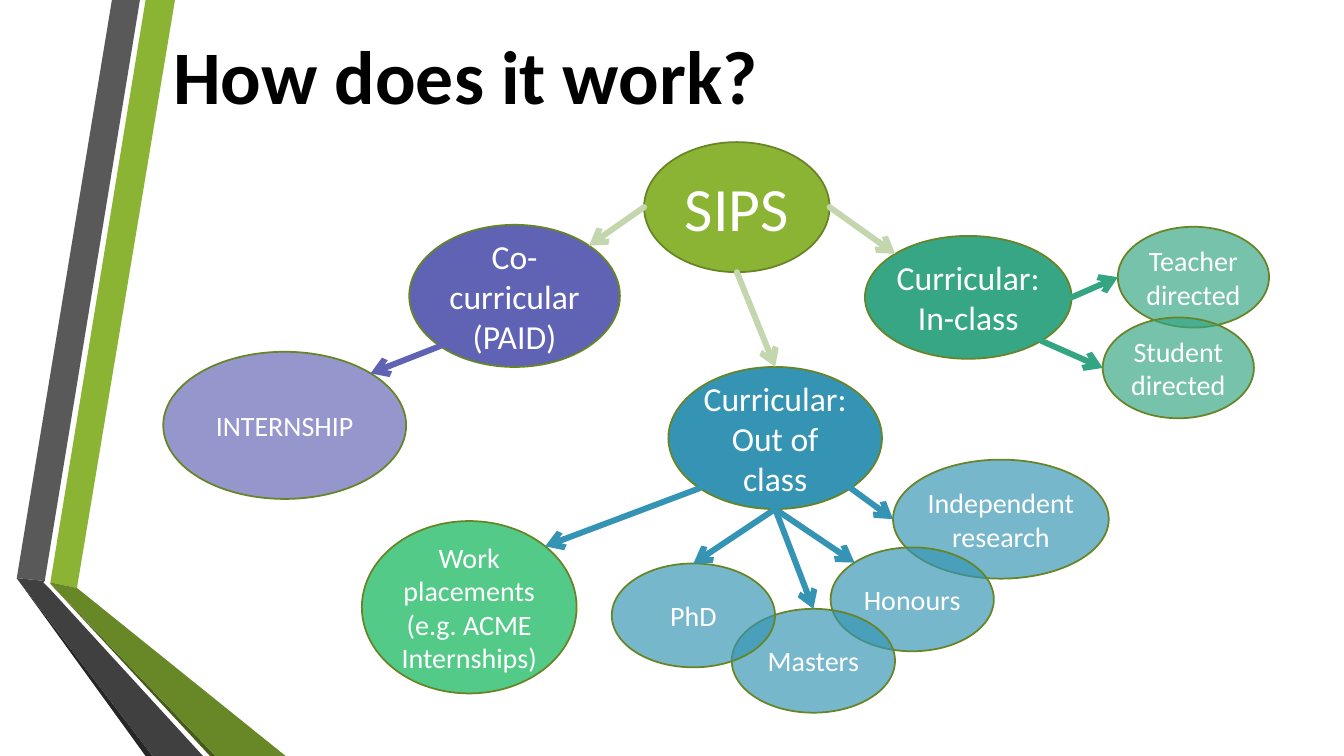
from math import cos, radians, sin

from lxml import etree
from pptx import Presentation
from pptx.dml.color import RGBColor
from pptx.enum.shapes import MSO_CONNECTOR, MSO_SHAPE
from pptx.enum.text import MSO_ANCHOR, MSO_AUTO_SIZE, PP_ALIGN
from pptx.oxml.ns import qn
from pptx.util import Pt

STRAIGHT = MSO_CONNECTOR.STRAIGHT
ELLIPSE = MSO_SHAPE.OVAL
TOP, MIDDLE = MSO_ANCHOR.TOP, MSO_ANCHOR.MIDDLE
LEFT, CENTER = PP_ALIGN.LEFT, PP_ALIGN.CENTER
NO_AUTOFIT = MSO_AUTO_SIZE.NONE
TITLE_ONLY = 5

COLORS = {
    "black": "000000", "white": "FFFFFF", "outline": "678526",
    "lime": "8BB434", "olive": "688727", "moss": "465A1A",
    "gray": "595959", "charcoal": "404040", "coal": "262626",
    "sage": "C4D6AE", "teal": "33A583", "blue": "3594B4",
    "violet": "6063B4", "green": "00B050",
}

RIBBONS = [
    ("lime", [(36, 416.2), (55.4, 419.8), (124.6, 0), (104.4, 0)]),
    ("gray", [(100.1, 0), (79.9, 0), (11.5, 412.6), (31.7, 415.4)]),
    ("coal", [(11.5, 412.6), (104.4, 540), (108.7, 540)]),
    ("moss", [(36, 416.9), (149.8, 540), (154.1, 540)]),
    ("olive", [(36, 416.9), (154.1, 540), (203.8, 540), (55.4, 419.8), (36, 416.2)]),
    ("charcoal", [(145.4, 540), (34.6, 419.8), (31, 416.2), (31.7, 415.4),
                  (11.5, 412.6), (108.7, 540)]),
]

BUBBLES = {
    "sips": (["SIPS"], (460.1, 101.5, 132.5, 92.9), "lime", 100, 44),
    "in_class": (["Curricular:", "In-class"], (617.8, 168.5, 147.6, 87.8), "teal", 98, 24),
    "out_of_class": (["Curricular:", "Out of class"], (477.4, 262.1, 152.6, 101.5), "blue", 100, 24),
    "teacher": (["Teacher directed"], (798.5, 162, 108, 72), "teal", 67, 20),
    "student": (["Student directed"], (787.7, 226.8, 108, 72), "teal", 67, 20),
    "research": (["Independent research"], (637.9, 328.3, 154.1, 85), "blue", 67, 20),
    "honours": (["Honours"], (593.3, 391, 116.6, 74.2), "blue", 67, 20),
    "masters": (["Masters"], (522.7, 434.9, 116.6, 74.2), "blue", 67, 20),
    "phd": (["PhD"], (437, 402.5, 116.6, 74.2), "blue", 67, 20),
    "co_curricular": (["Co-curricular", "(PAID)"], (292.3, 160.6, 150.5, 101.5), "violet", 100, 24),
    "internship": (["INTERNSHIP"], (116.6, 251.3, 173.5, 105.1), "violet", 67, 20),
    "placements": (["Work placements", "(e.g. ACME Internships)"],
                   (258.5, 372.2, 153.4, 123.1), "green", 67, 20),
}

ANGLES = {"right": 0, "bottom_right": 45, "bottom": 90, "bottom_left": 135,
          "left": 180, "top_left": 225, "top": 270, "top_right": 315}

ARROWS = [
    ("sips", "right", "in_class", "top_left", "sage"),
    ("sips", "bottom", "out_of_class", "top", "sage"),
    ("sips", "left", "co_curricular", "top_right", "sage"),
    ("in_class", "right", "teacher", "left", "teal"),
    ("in_class", "bottom_right", "student", "left", "teal"),
    ("out_of_class", "bottom", "phd", "top", "blue"),
    ("out_of_class", "bottom", "masters", "top", "blue"),
    ("out_of_class", "bottom", "honours", "top_left", "blue"),
    ("out_of_class", "bottom_right", "research", "left", "blue"),
    ("out_of_class", "bottom_left", "placements", "top_right", "blue"),
    ("co_curricular", "bottom_left", "internship", "top_right", "violet"),
]


def rim_point(bubble, side):
    left, top, width, height = BUBBLES[bubble][1]
    angle = radians(ANGLES[side])
    return (Pt(left + width / 2 * (1 + cos(angle))),
            Pt(top + height / 2 * (1 + sin(angle))))


class DiagramSlide:
    """Draws styled elements on one slide."""

    def __init__(self, slide, font="Calibri"):
        self.slide = slide
        self.shapes = slide.shapes
        self.font = font

    def color(self, name):
        return RGBColor.from_string(COLORS[name])

    def add_text(self, paragraph, text, size, color, alignment, bold=False):
        paragraph.alignment = alignment
        run = paragraph.add_run()
        run.text = text
        run.font.name = self.font
        run.font.size = Pt(size)
        run.font.bold = bold
        run.font.color.rgb = self.color(color)

    def title(self, text, left, top, width, height):
        shape = self.shapes.title
        shape.left, shape.top = Pt(left), Pt(top)
        shape.width, shape.height = Pt(width), Pt(height)
        frame = shape.text_frame
        frame.auto_size = NO_AUTOFIT
        frame.vertical_anchor = TOP
        self.add_text(frame.paragraphs[0], text, 54, "black", LEFT, bold=True)

    def ribbon(self, color, points):
        builder = self.shapes.build_freeform(*points[0], scale=Pt(1))
        builder.add_line_segments(points[1:], close=True)
        shape = builder.convert_to_shape()
        shape.shadow.inherit = False
        shape.fill.solid()
        shape.fill.fore_color.rgb = self.color(color)
        shape.line.fill.background()

    def bubble(self, lines, box, color, opacity, size):
        shape = self.shapes.add_shape(ELLIPSE, *(Pt(length) for length in box))
        shape.shadow.inherit = False
        shape.fill.solid()
        shape.fill.fore_color.rgb = self.color(color)
        if opacity < 100:
            fill_color = shape._element.spPr.find(qn("a:solidFill"))[0]
            etree.SubElement(fill_color, qn("a:alpha")).set("val", str(opacity * 1000))
        shape.line.color.rgb = self.color("outline")
        shape.line.width = Pt(1.25)
        frame = shape.text_frame
        frame.word_wrap = True
        frame.vertical_anchor = MIDDLE
        frame.margin_left = frame.margin_right = 0
        frame.margin_top = frame.margin_bottom = 0
        for index, text in enumerate(lines):
            paragraph = frame.add_paragraph() if index else frame.paragraphs[0]
            self.add_text(paragraph, text, size, "white", CENTER)

    def arrow(self, source, source_side, target, target_side, color):
        connector = self.shapes.add_connector(
            STRAIGHT, *rim_point(source, source_side), *rim_point(target, target_side))
        connector.line.color.rgb = self.color(color)
        connector.line.width = Pt(4.25)
        properties = connector._element.spPr
        line = properties.find(qn("a:ln"))
        line.set("cap", "rnd")
        etree.SubElement(line, qn("a:tailEnd")).set("type", "arrow")
        etree.SubElement(properties, qn("a:effectLst"))


def main():
    presentation = Presentation()
    presentation.slide_width, presentation.slide_height = Pt(960), Pt(540)
    slide = presentation.slides.add_slide(presentation.slide_layouts[TITLE_ONLY])
    diagram = DiagramSlide(slide)
    for color, points in RIBBONS:
        diagram.ribbon(color, points)
    diagram.title("How does it work?", 116.6, 17, 789.1, 110.2)
    for bubble in BUBBLES.values():
        diagram.bubble(*bubble)
    for arrow in ARROWS:
        diagram.arrow(*arrow)
    presentation.save("out.pptx")


if __name__ == "__main__":
    main()
